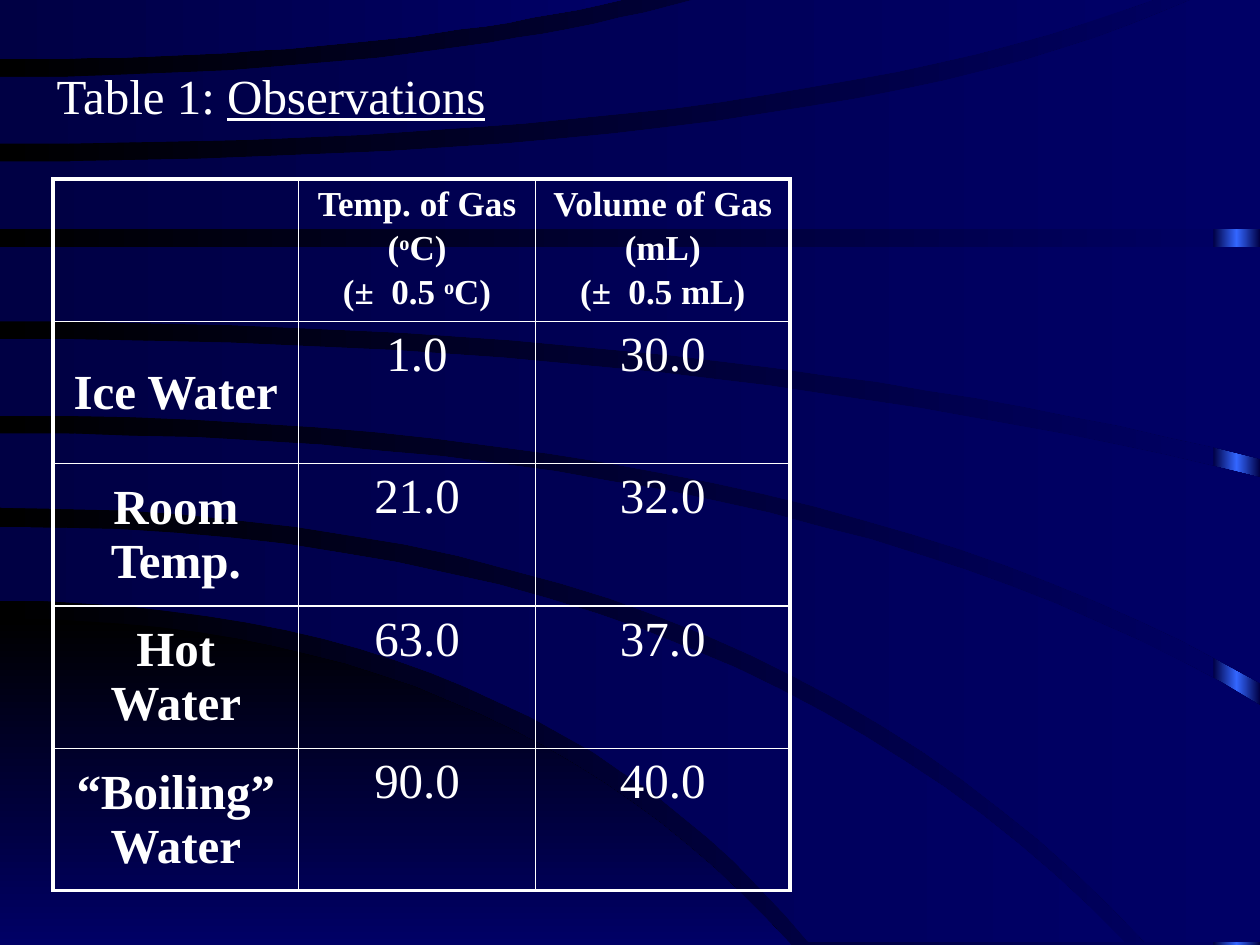
from copy import deepcopy

from lxml.etree import SubElement
from pptx import Presentation
from pptx.dml.color import RGBColor
from pptx.enum.shapes import MSO_SHAPE
from pptx.enum.text import MSO_ANCHOR, MSO_AUTO_SIZE, PP_ALIGN
from pptx.oxml.ns import qn
from pptx.util import Inches, Pt

FONT = "Times New Roman"
WHITE = RGBColor(0xFF, 0xFF, 0xFF)
BLACK = RGBColor(0, 0, 0)
NAVY = RGBColor(0, 0, 0x66)
DARK_NAVY = RGBColor(0, 0, 0x44)
BRIGHT_BLUE = RGBColor(0x33, 0x66, 0xFF)

WIDTH, HEIGHT = 10, 7.5
STRIP_WIDTH = 0.37

# Each header line is a tuple of runs; every second run is superscript.
HEADERS = [
    [],
    [("Temp. of Gas",), ("(", "o", "C)"), ("(±  0.5 ", "o", "C)")],
    [("Volume of Gas",), ("(mL)",), ("(±  0.5 mL)",)],
]
OBSERVATIONS = [
    ("Ice Water", "1.0", "30.0"),
    ("Room Temp.", "21.0", "32.0"),
    ("Hot Water", "63.0", "37.0"),
    ("“Boiling” Water", "90.0", "40.0"),
]
TABLE_LEFT, TABLE_TOP = 0.42, 1.42
COLUMN_WIDTHS = [1.95, 1.88, 2.02]
ROW_HEIGHT = 1.13
OUTER_LINE, INNER_LINE = 2.25, 1

# An edge leaves the left side level: (start y, bend x, end x, end y).
# A swoosh is its upper edge, the slide corners it takes in, and its lower edge.
CORNER_SWOOSH = ((4.91, 3.96, 6.28, HEIGHT), [], (HEIGHT, 0, 0, HEIGHT))
BANDS = [
    ((4.18, 5.76, 8.93, 7.48), [], (4.77, 4.17, 6.42, 7.48)),
    ((3.44, 6.4, WIDTH, 5.6), [(WIDTH, 7.48)], (4.03, 5.9, 9.09, 7.48)),
    ((2.69, 5.54, WIDTH, 3.79), [], (3.3, 6.3, WIDTH, 5.42)),
    ((1.96, 5, WIDTH, 1.96), [], (2.55, 5.66, WIDTH, 3.64)),
    ((1.28, 6.65, 9.45, 0), [(WIDTH, 0)], (1.82, 5, WIDTH, 1.82)),
    ((0.61, 3.25, 5.5, 0), [], (1.14, 6.12, 9.15, 0)),
    ((0, 2.5, 4.93, 0), [], (0.47, 2.88, 4.93, 0)),
]
CURVE_STEPS = 24


def paint(fill, colors, angle=0):
    """Blend two colours; angle turns counter-clockwise from left to right."""
    fill.gradient()
    fill.gradient_angle = angle
    for stop, color in zip(fill.gradient_stops, colors):
        stop.color.rgb = color


def finish(shape, colors, angle=0):
    paint(shape.fill, colors, angle)
    shape.line.fill.background()
    shape.shadow.inherit = False


def add_middle_stop(shape, color):
    stops = shape.element.spPr.find(".//" + qn("a:gsLst"))
    middle = deepcopy(stops[0])
    middle.set("pos", "50000")
    middle[0].set("val", str(color))
    stops.insert(1, middle)


def curve(start_y, bend_x, end_x, end_y):
    """Points of a quadratic curve that starts level at the slide's left side."""
    steps = [n / CURVE_STEPS for n in range(CURVE_STEPS + 1)]
    return [(2 * t * (1 - t) * bend_x + t * t * end_x,
             start_y + t * t * (end_y - start_y)) for t in steps]


def add_swoosh(slide, swoosh, colors, angle=0):
    upper, corners, lower = swoosh
    points = curve(*upper) + corners + curve(*lower)[::-1]
    outline = [(x * 100, y * 100) for x, y in points]
    builder = slide.shapes.build_freeform(*outline[0], scale=Inches(1) / 100)
    builder.add_line_segments(outline[1:], close=True)
    finish(builder.convert_to_shape(), colors, angle)


def write(paragraph, text, size=28, bold=False, underline=False, superscript=False):
    run = paragraph.add_run()
    run.text = text
    font = run.font
    font.name, font.size, font.bold, font.underline = FONT, Pt(size), bold, underline
    font.color.rgb = WHITE
    if superscript:
        run._r.get_or_add_rPr().set("baseline", "30000")


def set_borders(cell, widths):
    """Draw white borders, with widths in points for left, right, top and bottom."""
    properties = cell._tc.get_or_add_tcPr()
    for position, (side, width) in enumerate(zip("LRTB", widths)):
        line = SubElement(properties, qn(f"a:ln{side}"), w=str(Pt(width)))
        color = SubElement(SubElement(line, qn("a:solidFill")), qn("a:srgbClr"))
        color.set("val", str(WHITE))
        properties.insert(position, line)


def add_backdrop(slide):
    paint(slide.background.fill, (BLACK, NAVY))
    strip = slide.shapes.add_shape(
        MSO_SHAPE.RECTANGLE, Inches(WIDTH - STRIP_WIDTH), 0,
        Inches(STRIP_WIDTH), Inches(HEIGHT))
    finish(strip, (DARK_NAVY, DARK_NAVY))
    add_middle_stop(strip, BRIGHT_BLUE)
    add_swoosh(slide, CORNER_SWOOSH, (BLACK, NAVY), angle=270)
    for band in BANDS:
        add_swoosh(slide, band, (DARK_NAVY, NAVY))


def add_title(slide):
    title = slide.shapes.title
    slide.shapes.element.append(title.element)  # in front of the backdrop
    title.left, title.top, title.width, title.height = map(Inches, (0.25, 0.25, 8.5, 1))
    frame = title.text_frame
    frame.auto_size = MSO_AUTO_SIZE.NONE
    frame.vertical_anchor = MSO_ANCHOR.MIDDLE
    frame.margin_left = Inches(0.2)
    heading = frame.paragraphs[0]
    heading.alignment = PP_ALIGN.LEFT
    write(heading, "Table 1: ")
    write(heading, "Observations", underline=True)


def add_observations(slide):
    rows, columns = len(OBSERVATIONS) + 1, len(COLUMN_WIDTHS)
    table = slide.shapes.add_table(
        rows, columns, Inches(TABLE_LEFT), Inches(TABLE_TOP),
        Inches(sum(COLUMN_WIDTHS)), Inches(ROW_HEIGHT * rows)).table
    table.first_row = table.horz_banding = False
    for column, width in zip(table.columns, COLUMN_WIDTHS):
        column.width = Inches(width)

    body = [[[(text,)] for text in row] for row in OBSERVATIONS]
    for r, row in enumerate([HEADERS] + body):
        for c, lines in enumerate(row):
            cell = table.cell(r, c)
            cell.fill.background()
            on_edge = (c == 0, c == columns - 1, r == 0, r == rows - 1)
            set_borders(cell, [OUTER_LINE if edge else INNER_LINE for edge in on_edge])
            if c == 0:
                cell.vertical_anchor = MSO_ANCHOR.MIDDLE
            frame = cell.text_frame
            for n, runs in enumerate(lines):
                paragraph = frame.add_paragraph() if n else frame.paragraphs[0]
                paragraph.alignment = PP_ALIGN.CENTER
                paragraph.space_before = Pt(3 if n else 0)
                for k, text in enumerate(runs):
                    write(paragraph, text, size=28 if r else 20,
                          bold=r == 0 or c == 0, superscript=k % 2 == 1)


def main():
    deck = Presentation()
    deck.slide_width, deck.slide_height = Inches(WIDTH), Inches(HEIGHT)
    slide = deck.slides.add_slide(deck.slide_layouts[5])
    add_backdrop(slide)
    add_title(slide)
    add_observations(slide)
    deck.save("out.pptx")


if __name__ == "__main__":
    main()
